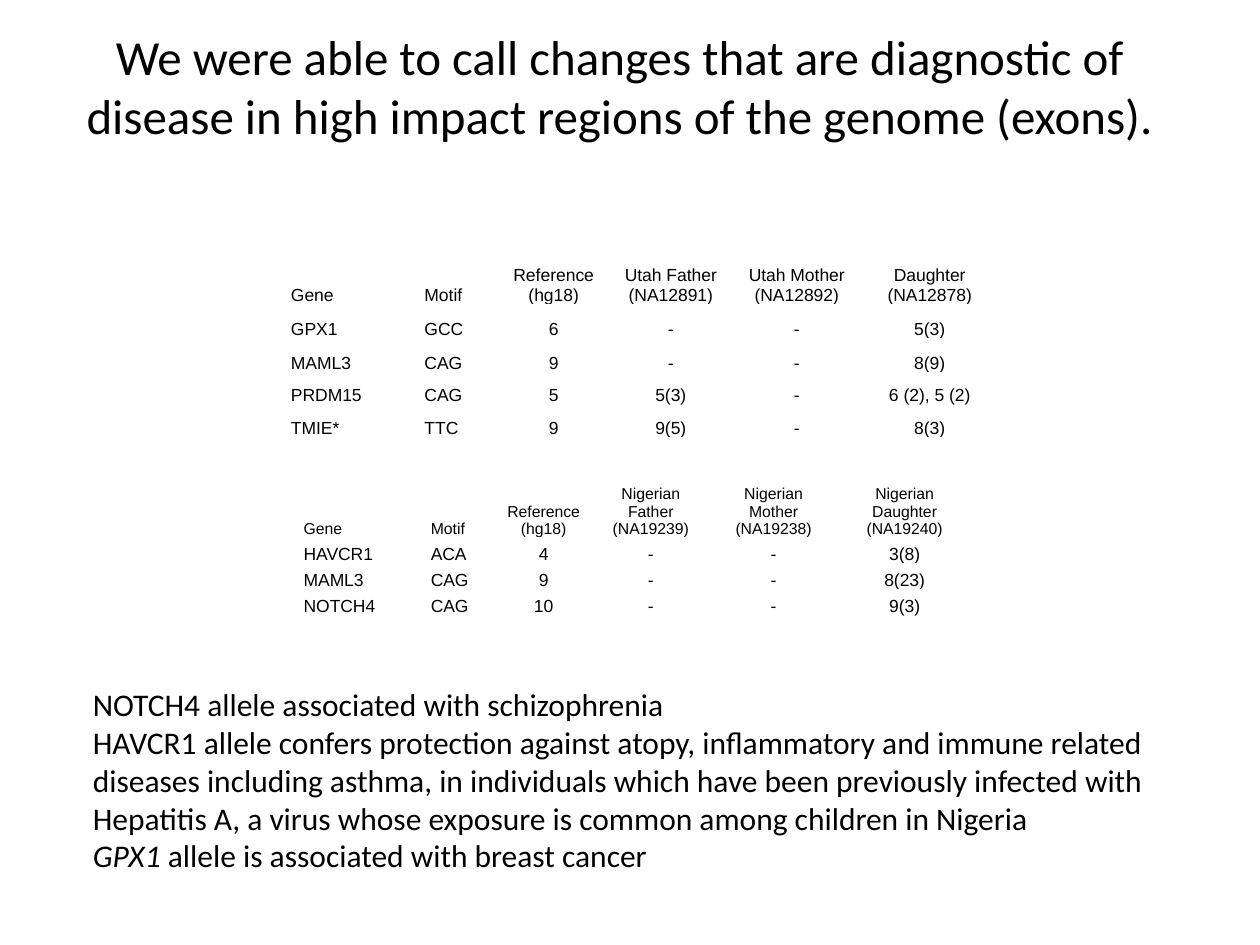
from dataclasses import dataclass

from pptx import Presentation
from pptx.dml.color import RGBColor
from pptx.enum.text import MSO_ANCHOR, PP_ALIGN
from pptx.util import Pt

LEFT, CENTER = PP_ALIGN.LEFT, PP_ALIGN.CENTER
MIDDLE, BOTTOM = MSO_ANCHOR.MIDDLE, MSO_ANCHOR.BOTTOM
TITLE_ONLY = 5


@dataclass(frozen=True)
class Theme:
    ink: RGBColor = RGBColor(0, 0, 0)
    prose_font: str = "Calibri"
    table_font: str = "Arial"
    title_size: float = 28
    findings_size: float = 18
    cell_size: float = 10
    small_header_size: float = 9


THEME = Theme()

TITLE = ("We were able to call changes that are diagnostic of disease "
         "in high impact regions of the genome (exons).")

# Each finding is a list of (text, italic) pieces.
FINDINGS = [
    [("NOTCH4 allele associated with schizophrenia", False)],
    [("HAVCR1 allele confers protection against atopy, inflammatory and immune "
      "related diseases including asthma, in individuals which have been "
      "previously infected with Hepatitis A, a virus whose exposure is common "
      "among children in Nigeria", False)],
    [("GPX1", True), (" allele is associated with breast cancer", False)],
]

UTAH = {
    "origin": (161.3, 143.3),
    "column_widths": [76.3, 48.2, 61.2, 72.7, 71.3, 80.6],
    "row_heights": [31, 19.4, 19.4, 18.7, 18.7],
    "header_size": THEME.cell_size,
    "rows": [
        ["Gene", "Motif", "Reference\n(hg18)", "Utah Father (NA12891)",
         "Utah Mother (NA12892)", "Daughter (NA12878)"],
        ["GPX1", "GCC", "6", "-", "-", "5(3)"],
        ["MAML3", "CAG", "9", "-", "-", "8(9)"],
        ["PRDM15", "CAG", "5", "5(3)", "-", "6 (2), 5 (2)"],
        ["TMIE*", "TTC", "9", "9(5)", "-", "8(3)"],
    ],
}

NIGERIA = {
    "origin": (168.5, 275),
    "column_widths": [72.7, 43.2, 52.6, 69.8, 70.6, 79.2],
    "row_heights": [32.4, 14.9, 14.9, 14.9],
    "header_size": THEME.small_header_size,
    "rows": [
        ["Gene", "Motif", "Reference\n(hg18)", "Nigerian Father (NA19239)",
         "Nigerian Mother (NA19238)", "Nigerian Daughter (NA19240)"],
        ["HAVCR1", "ACA", "4", "-", "-", "3(8)"],
        ["MAML3", "CAG", "9", "-", "-", "8(23)"],
        ["NOTCH4", "CAG", "10", "-", "-", "9(3)"],
    ],
}


def format_text(frame, font_name, size, align):
    for paragraph in frame.paragraphs:
        paragraph.alignment = align
        for run in paragraph.runs:
            run.font.name = font_name
            run.font.size = Pt(size)
            run.font.color.rgb = THEME.ink


def add_title(slide):
    title = slide.shapes.title
    title.left, title.top, title.width, title.height = map(Pt, (24.5, 13, 659, 72))
    title.text_frame.text = TITLE
    title.text_frame.vertical_anchor = MIDDLE
    format_text(title.text_frame, THEME.prose_font, THEME.title_size, CENTER)


def add_genotypes(slide, family):
    """Add a family's table: gene and motif flush left, counts centred."""
    rows, widths, heights = (family[key] for key in
                             ("rows", "column_widths", "row_heights"))
    left, top = family["origin"]
    table = slide.shapes.add_table(len(rows), len(widths), Pt(left), Pt(top),
                                   Pt(sum(widths)), Pt(sum(heights))).table
    table.first_row = table.horz_banding = False
    for column, width in zip(table.columns, widths):
        column.width = Pt(width)
    for r, (values, height) in enumerate(zip(rows, heights)):
        table.rows[r].height = Pt(height)
        size = THEME.cell_size if r else family["header_size"]
        for c, value in enumerate(values):
            cell = table.cell(r, c)
            cell.fill.background()
            cell.vertical_anchor = BOTTOM
            cell.margin_left = cell.margin_right = Pt(5)
            cell.margin_top = cell.margin_bottom = 0
            cell.text_frame.text = value
            format_text(cell.text_frame, THEME.table_font, size,
                        LEFT if c < 2 else CENTER)


def add_findings(slide):
    frame = slide.shapes.add_textbox(Pt(46), Pt(388), Pt(639.5), Pt(138)).text_frame
    frame.word_wrap = True
    for i, pieces in enumerate(FINDINGS):
        paragraph = frame.add_paragraph() if i else frame.paragraphs[0]
        for text, italic in pieces:
            run = paragraph.add_run()
            run.text = text
            run.font.italic = italic
    format_text(frame, THEME.prose_font, THEME.findings_size, LEFT)


def main():
    deck = Presentation()
    deck.slide_width, deck.slide_height = Pt(720), Pt(540)
    slide = deck.slides.add_slide(deck.slide_layouts[TITLE_ONLY])
    add_title(slide)
    add_findings(slide)
    for family in (UTAH, NIGERIA):
        add_genotypes(slide, family)
    deck.save("out.pptx")


if __name__ == "__main__":
    main()
